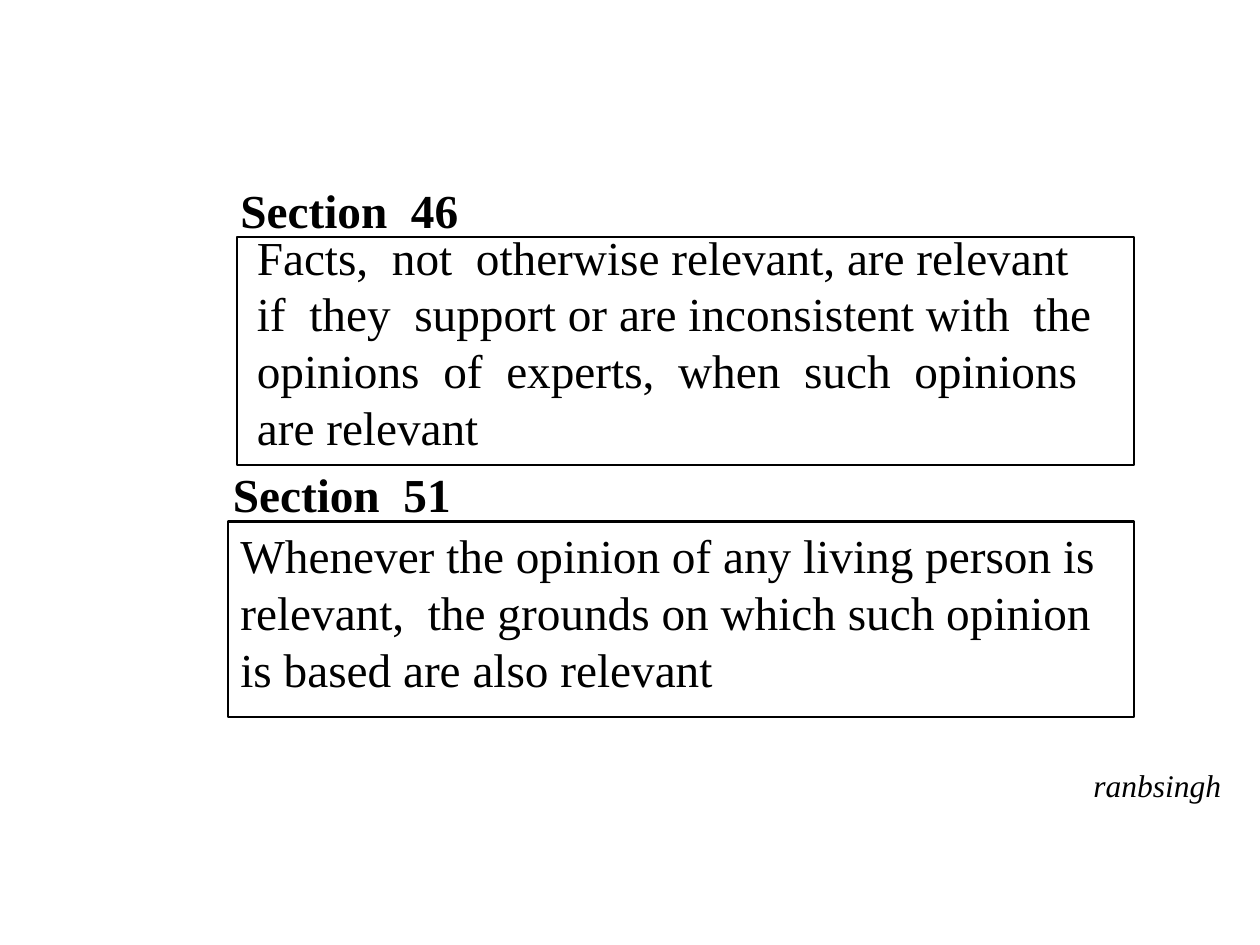
from pptx import Presentation
from pptx import util as u
from pptx.dml import color
from pptx.enum import shapes, text

HUES = {"ink": "000000"}
INK = color.RGBColor.from_string(HUES["ink"])
FONT = {"name": "Times New Roman", "bold": False, "italic": False}
FRAME = {
    "word_wrap": True,
    "auto_size": text.MSO_AUTO_SIZE.NONE,
    "vertical_anchor": text.MSO_ANCHOR.TOP,
    "margin_top": u.Inches(0.08),
    "margin_bottom": u.Inches(0.02),
}


def apply(item, values):
    for key, value in values.items():
        setattr(item, key, value)


def add_text(slide, box, lines, size=27, **style):
    frame = slide.shapes.add_textbox(*map(u.Inches, box)).text_frame
    apply(frame, FRAME)
    for i, line in enumerate(lines):
        para = frame.add_paragraph() if i else frame.paragraphs[0]
        para.line_spacing = u.Pt(round(size * 1.2, 1))
        run = para.add_run()
        run.text = line
        apply(run.font, {**FONT, "size": u.Pt(size), **style})
        run.font.color.rgb = INK


def add_border(slide, box):
    rect = slide.shapes.add_shape(shapes.MSO_SHAPE.RECTANGLE, *map(u.Inches, box))
    rect.shadow.inherit = False
    rect.fill.background()
    rect.line.color.rgb = INK
    rect.line.width = u.Pt(1.5)


def add_section(slide, box, head, head_at, lines, body):
    add_text(slide, (*head_at, 1.95, 0.56), [head], bold=True)
    add_text(slide, body, lines)
    add_border(slide, box)


def main():
    deck = Presentation()
    apply(deck, {"slide_width": u.Inches(10), "slide_height": u.Inches(7.5)})
    slide = deck.slides.add_slide(deck.slide_layouts[6])
    add_section(
        slide, (1.88, 1.88, 7.12, 1.81), "Section  46", (1.81, 1.36),
        ["Facts,  not  otherwise relevant, are relevant",
         "if  they  support or are inconsistent with  the",
         "opinions  of  experts,  when  such  opinions",
         "are relevant"],
        (1.94, 1.73, 6.99, 1.92),
    )
    add_section(
        slide, (1.81, 4.14, 7.19, 1.55), "Section  51", (1.75, 3.61),
        ["Whenever the opinion of any living person is",
         "relevant,  the grounds on which such opinion",
         "is based are also relevant"],
        (1.81, 4.1, 7.14, 1.46),
    )
    add_text(slide, (8.58, 6, 1.23, 0.4), ["ranbsingh"], size=18, italic=True)
    deck.save("out.pptx")


if __name__ == "__main__":
    main()
